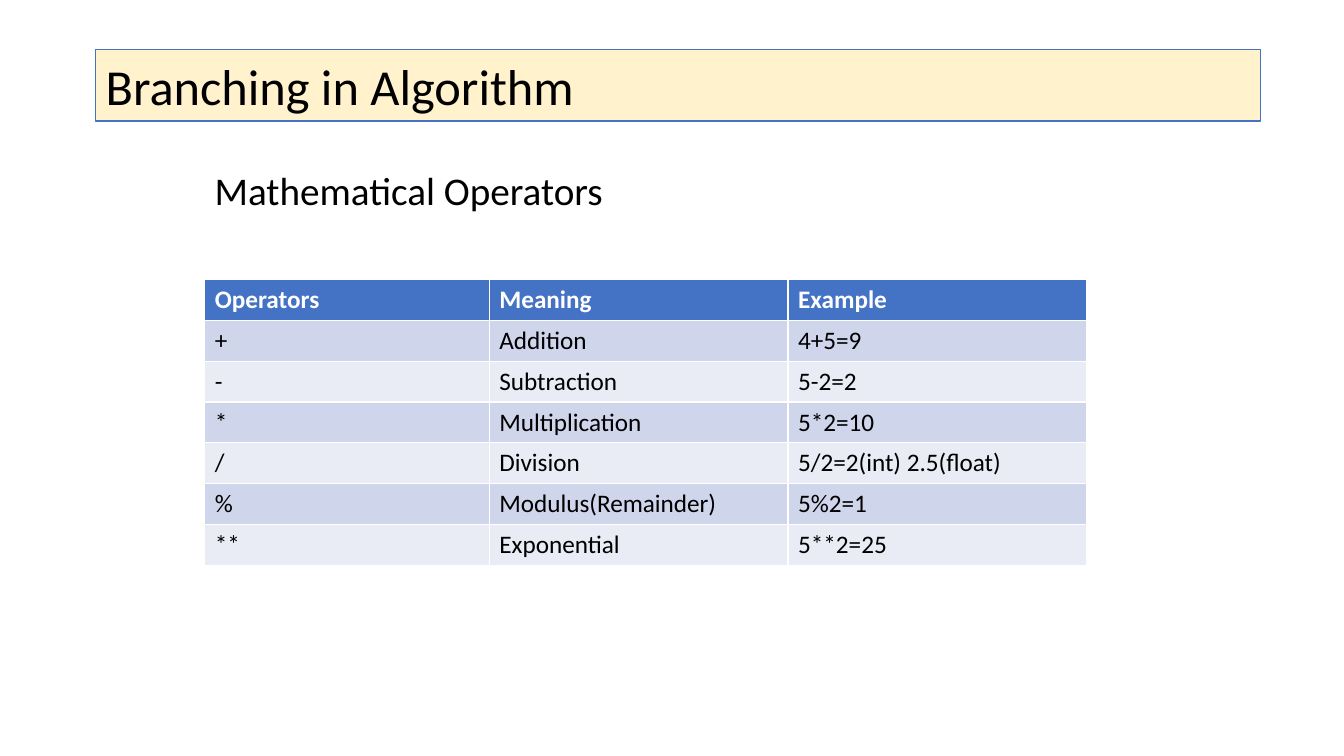
"""Build the slide on mathematical operators."""
from pptx import Presentation
from pptx.dml.color import RGBColor
from pptx.enum.text import MSO_ANCHOR, MSO_AUTO_SIZE, PP_ALIGN
from pptx.util import Cm, Pt

FONT = "Calibri"
BLACK, WHITE, BLUE, CREAM = "000000", "FFFFFF", "4472C4", "FFF2CC"
BANDS = ("CFD5EA", "E9EBF5")
COLUMN_WIDTHS = (7.17, 7.53, 7.53)
ROW_HEIGHT = 1.03
OPERATORS = (
    ("Operators", "Meaning", "Example"),
    ("+", "Addition", "4+5=9"),
    ("-", "Subtraction", "5-2=2"),
    ("*", "Multiplication", "5*2=10"),
    ("/", "Division", "5/2=2(int) 2.5(float)"),
    ("%", "Modulus(Remainder)", "5%2=1"),
    ("**", "Exponential", "5**2=25"),
)


def color(hex_code):
    return RGBColor.from_string(hex_code)


def paint(target, hex_code):
    target.fill.solid()
    target.fill.fore_color.rgb = color(hex_code)


def write(frame, text, size, hex_code=BLACK, bold=False):
    frame.text = text
    paragraph = frame.paragraphs[0]
    paragraph.alignment = PP_ALIGN.LEFT
    font = paragraph.font
    font.name, font.size, font.bold = FONT, Pt(size), bold
    font.color.rgb = color(hex_code)


def add_title(slide, text):
    title = slide.shapes.title
    title.left, title.top = Cm(2.41), Cm(1.25)
    title.width, title.height = Cm(29.36), Cm(1.8)
    paint(title, CREAM)
    title.line.color.rgb = color(BLUE)
    title.line.width = Pt(0.75)
    frame = title.text_frame
    frame.auto_size = MSO_AUTO_SIZE.NONE
    frame.vertical_anchor = MSO_ANCHOR.TOP
    write(frame, text, 36)


def add_heading(slide, text):
    heading = slide.shapes.add_textbox(Cm(5.16), Cm(4.06), Cm(13.51), Cm(1.45))
    heading.text_frame.word_wrap = True
    write(heading.text_frame, text, 28)


def add_operator_table(slide, rows):
    table = slide.shapes.add_table(
        len(rows), len(COLUMN_WIDTHS), Cm(5.16), Cm(7.04),
        Cm(sum(COLUMN_WIDTHS)), Cm(ROW_HEIGHT * len(rows))).table
    for column, width in zip(table.columns, COLUMN_WIDTHS):
        column.width = Cm(width)
    for r, texts in enumerate(rows):
        table.rows[r].height = Cm(ROW_HEIGHT)
        is_header = r == 0
        for c, text in enumerate(texts):
            cell = table.cell(r, c)
            paint(cell, BLUE if is_header else BANDS[(r - 1) % 2])
            write(cell.text_frame, text, 18, WHITE if is_header else BLACK, is_header)


def main():
    deck = Presentation()
    deck.slide_width, deck.slide_height = Cm(33.87), Cm(19.05)
    slide = deck.slides.add_slide(deck.slide_layouts.get_by_name("Title Only"))
    add_title(slide, "Branching in Algorithm")
    add_operator_table(slide, OPERATORS)
    add_heading(slide, "Mathematical Operators")
    deck.save("out.pptx")


if __name__ == "__main__":
    main()
